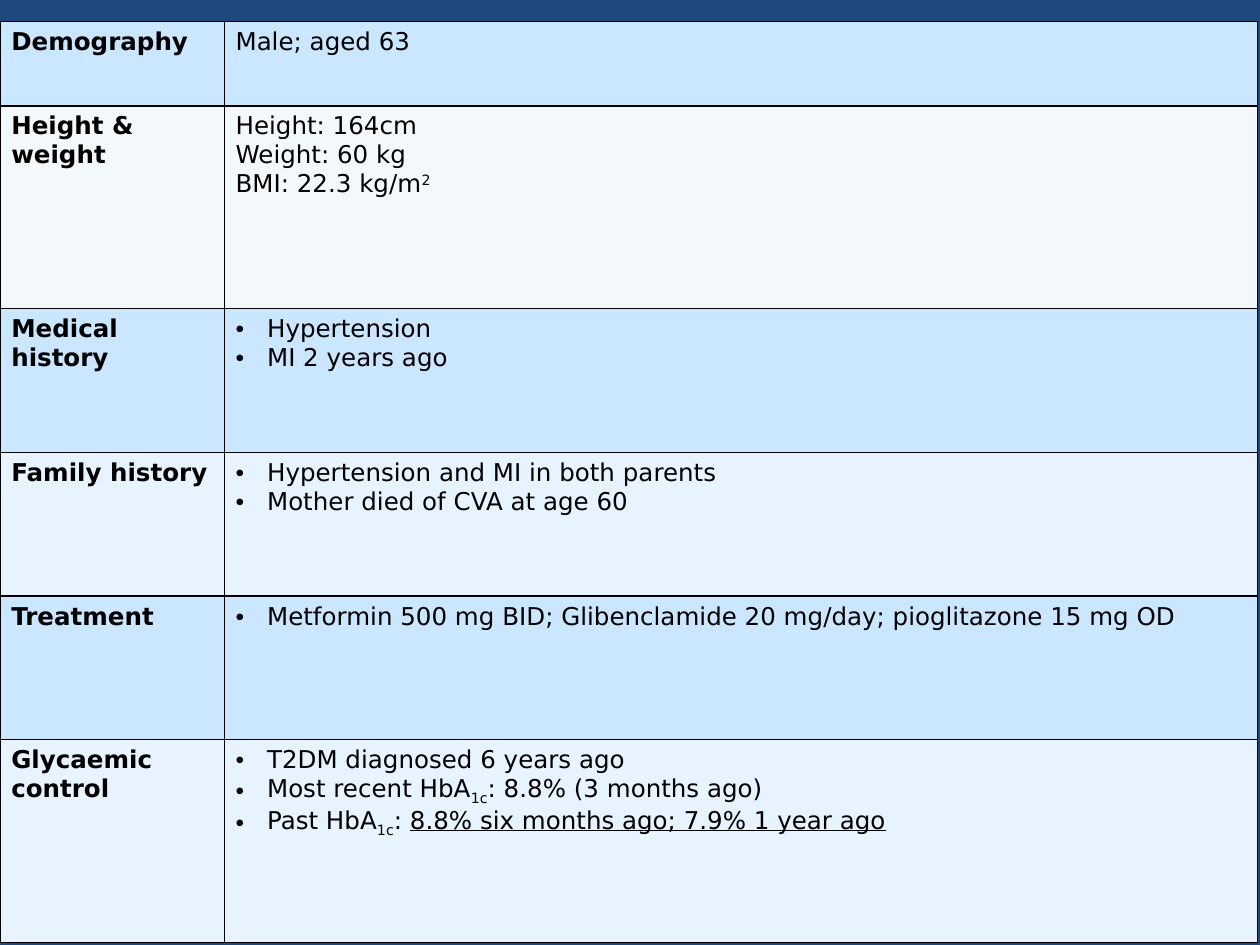
"""Build a patient case summary slide as a two-column table."""
from lxml.etree import SubElement
from pptx import Presentation
from pptx.dml.color import RGBColor
from pptx.oxml.ns import qn
from pptx.util import Inches, Pt

NAVY = RGBColor(0x1F, 0x49, 0x7D)
BLACK = RGBColor(0x00, 0x00, 0x00)
BLUE = RGBColor(0xCB, 0xE6, 0xFF)
PALE = RGBColor(0xE7, 0xF3, 0xFF)
MIST = RGBColor(0xF3, 0xF9, 0xFA)
FONT = "DejaVu Sans"
SUPERSCRIPT, SUBSCRIPT = 30000, -25000

PLAIN = {}
HBA1C = ("1c", {"baseline": SUBSCRIPT})
ROWS = [
    ("Demography", 0.67, BLUE, False, [[("Male; aged 63", PLAIN)]]),
    ("Height & weight", 1.61, MIST, False, [
        [("Height: 164cm", PLAIN)],
        [("Weight: 60 kg", PLAIN)],
        [("BMI: 22.3 kg/m", PLAIN), ("2", {"baseline": SUPERSCRIPT})],
    ]),
    ("Medical history", 1.14, BLUE, True, [
        [("Hypertension", PLAIN)],
        [("MI 2 years ago", PLAIN)],
    ]),
    ("Family history", 1.14, PALE, True, [
        [("Hypertension and MI in both parents", PLAIN)],
        [("Mother died of CVA at age 60", PLAIN)],
    ]),
    ("Treatment", 1.14, BLUE, True, [
        [("Metformin 500 mg BID; Glibenclamide 20 mg/day; pioglitazone 15 mg OD", PLAIN)],
    ]),
    ("Glycaemic control", 1.61, PALE, True, [
        [("T2DM diagnosed 6 years ago", PLAIN)],
        [("Most recent HbA", PLAIN), HBA1C, (": 8.8% (3 months ago)", PLAIN)],
        [("Past HbA", PLAIN), HBA1C, (": ", PLAIN),
         ("8.8% six months ago; 7.9% 1 year ago", {"underline": True})],
    ]),
]


def style_cell(cell, color):
    properties = cell._tc.get_or_add_tcPr()
    for side in ("a:lnL", "a:lnR", "a:lnT", "a:lnB"):
        line = SubElement(properties, qn(side), w=str(Pt(1)))
        SubElement(SubElement(line, qn("a:solidFill")), qn("a:srgbClr"), val=str(BLACK))
    cell.fill.solid()
    cell.fill.fore_color.rgb = color
    cell.margin_left = cell.margin_right = Inches(0.09)
    cell.margin_top = cell.margin_bottom = Inches(0.05)


def write_paragraph(paragraph, spans, bold=False, bulleted=False):
    if bulleted:
        properties = paragraph._p.get_or_add_pPr()
        properties.set("marL", str(Inches(0.25)))
        properties.set("indent", str(-Inches(0.25)))
        SubElement(properties, qn("a:buFont"), typeface="Arial")
        SubElement(properties, qn("a:buChar"), char="•")
    for text, style in spans:
        span = paragraph.add_run()
        span.text = text
        span.font.name = FONT
        span.font.size = Pt(14)
        span.font.bold = bold
        span.font.color.rgb = BLACK
        if "underline" in style:
            span.font.underline = True
        if "baseline" in style:
            span._r.get_or_add_rPr().set("baseline", str(style["baseline"]))


deck = Presentation()
deck.slide_width = Inches(10)
deck.slide_height = Inches(7.5)
page = deck.slides.add_slide(deck.slide_layouts[6])
page.background.fill.solid()
page.background.fill.fore_color.rgb = NAVY

table = page.shapes.add_table(
    len(ROWS), 2, Inches(0), Inches(0.17), Inches(9.98), Inches(7.33)
).table
table.first_row = False
table.horz_banding = False
table.columns[0].width = Inches(1.78)
table.columns[1].width = Inches(8.2)

for index, (heading, height, color, bulleted, paragraphs) in enumerate(ROWS):
    table.rows[index].height = Inches(height)
    heading_cell, detail_cell = table.cell(index, 0), table.cell(index, 1)
    style_cell(heading_cell, color)
    style_cell(detail_cell, color)
    write_paragraph(heading_cell.text_frame.paragraphs[0], [(heading, PLAIN)], bold=True)
    frame = detail_cell.text_frame
    for number, spans in enumerate(paragraphs):
        paragraph = frame.add_paragraph() if number else frame.paragraphs[0]
        write_paragraph(paragraph, spans, bulleted=bulleted)

deck.save("out.pptx")
